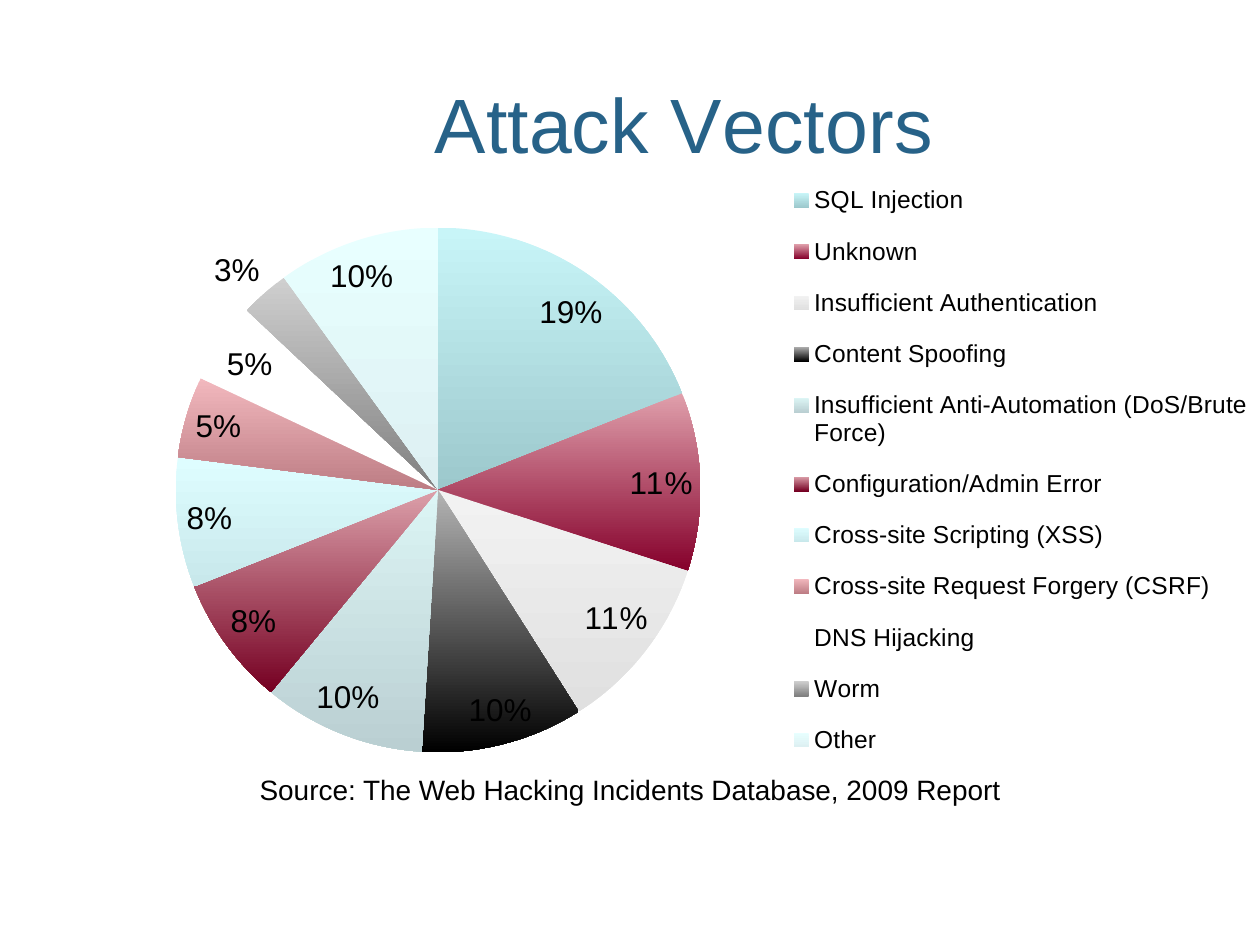
import dataclasses

import lxml.etree
import pptx
import pptx.chart.data
import pptx.dml.color
import pptx.enum.chart
import pptx.enum.text
import pptx.oxml.ns
import pptx.util

Cm = pptx.util.Cm
Pt = pptx.util.Pt
RGBColor = pptx.dml.color.RGBColor

FONT = "Arial"
TITLE_BLUE = RGBColor(0x27, 0x62, 0x88)
BLACK = RGBColor(0x00, 0x00, 0x00)
WHITE = RGBColor(0xFF, 0xFF, 0xFF)


@dataclasses.dataclass(frozen=True)
class Slice:
    """One attack vector with its share and vertical gradient."""
    name: str
    share: float
    top: RGBColor
    bottom: RGBColor


SLICES = [
    Slice("SQL Injection", 0.19, RGBColor(0xC8, 0xF5, 0xF8), RGBColor(0x9C, 0xC8, 0xCC)),
    Slice("Unknown", 0.11, RGBColor(0xE0, 0xA0, 0xAC), RGBColor(0x85, 0x00, 0x2B)),
    Slice("Insufficient Authentication", 0.11, RGBColor(0xF2, 0xF2, 0xF2), RGBColor(0xE0, 0xE0, 0xE0)),
    Slice("Content Spoofing", 0.1, RGBColor(0xB4, 0xB4, 0xB4), BLACK),
    Slice("Insufficient Anti-Automation (DoS/Brute Force)", 0.1,
          RGBColor(0xDC, 0xF5, 0xF5), RGBColor(0xBA, 0xCF, 0xD2)),
    Slice("Configuration/Admin Error", 0.08, RGBColor(0xDC, 0xA0, 0xAA), RGBColor(0x75, 0x00, 0x22)),
    Slice("Cross-site Scripting (XSS)", 0.08, RGBColor(0xDE, 0xFD, 0xFF), RGBColor(0xC8, 0xE8, 0xEB)),
    Slice("Cross-site Request Forgery (CSRF)", 0.05, RGBColor(0xF2, 0xB8, 0xBE), RGBColor(0xBD, 0x7D, 0x84)),
    Slice("DNS Hijacking", 0.05, WHITE, WHITE),
    Slice("Worm", 0.03, RGBColor(0xCF, 0xCF, 0xCF), RGBColor(0x80, 0x80, 0x80)),
    Slice("Other", 0.1, RGBColor(0xE8, 0xFF, 0xFF), RGBColor(0xDD, 0xF0, 0xF2)),
]


def style_font(font, size: float, color: RGBColor) -> None:
    font.name = FONT
    font.size = Pt(size)
    font.bold = False
    font.color.rgb = color


def set_layout(element, index: int, inner: bool = False, **fractions: float) -> None:
    """Place a chart part by fractions of the chart area."""
    qn = pptx.oxml.ns.qn
    for old_layout in element.findall(qn("c:layout")):
        element.remove(old_layout)
    layout = lxml.etree.Element(qn("c:layout"))
    manual = lxml.etree.SubElement(layout, qn("c:manualLayout"))
    settings = {"layoutTarget": "inner"} if inner else {}
    settings |= {"xMode": "edge", "yMode": "edge", **fractions}
    for tag, value in settings.items():
        lxml.etree.SubElement(manual, qn(f"c:{tag}")).set("val", str(value))
    element.insert(index, layout)


def paint_slice(point, item: Slice) -> None:
    fill = point.format.fill
    if item.top == item.bottom:
        fill.solid()
        fill.fore_color.rgb = item.top
    else:
        fill.gradient()
        fill.gradient_angle = 270
        for stop, color in zip(fill.gradient_stops, (item.top, item.bottom)):
            stop.color.rgb = color
    point.format.line.fill.background()


def add_pie(slide) -> None:
    data = pptx.chart.data.CategoryChartData(number_format="0%")
    data.categories = [item.name for item in SLICES]
    data.add_series("Attack Vectors", [item.share for item in SLICES])
    chart = slide.shapes.add_chart(
        pptx.enum.chart.XL_CHART_TYPE.PIE,
        Cm(1.9), Cm(0.43), Cm(23.5), Cm(15.88), data).chart
    style_font(chart.font, 18, BLACK)

    # Title
    chart.has_title = True
    title = chart.chart_title
    title.text_frame.text = "Attack Vectors"
    style_font(title.text_frame.paragraphs[0].font, 44, TITLE_BLUE)
    set_layout(title._element, 1, x=0.28, y=0.05)

    # Legend
    chart.has_legend = True
    legend = chart.legend
    legend.position = pptx.enum.chart.XL_LEGEND_POSITION.RIGHT
    legend.include_in_layout = False
    style_font(legend.font, 14, BLACK)
    set_layout(legend._element, 1, x=0.59, y=0.18, w=0.41, h=0.78)

    # Slices and their labels
    plot = chart.plots[0]
    plot.vary_by_categories = True
    plot.has_data_labels = True
    labels = plot.data_labels
    labels.show_value = True
    labels.show_percentage = False
    labels.number_format = "0%"
    labels.number_format_is_linked = False
    labels.position = pptx.enum.chart.XL_LABEL_POSITION.BEST_FIT
    style_font(labels.font, 18, BLACK)
    for index, item in enumerate(SLICES):
        paint_slice(plot.series[0].points[index], item)
    plot_area = chart._chartSpace.xpath("c:chart/c:plotArea")[0]
    set_layout(plot_area, 0, inner=True, x=0.07, y=0.26, w=0.45, h=0.67)


def add_source(slide) -> None:
    box = slide.shapes.add_textbox(Cm(0.32), Cm(15.44), Cm(24.77), Cm(1.14))
    box.text_frame.word_wrap = False
    paragraph = box.text_frame.paragraphs[0]
    paragraph.text = "Source: The Web Hacking Incidents Database, 2009 Report"
    paragraph.alignment = pptx.enum.text.PP_ALIGN.CENTER
    style_font(paragraph.font, 16, BLACK)


def main() -> None:
    presentation = pptx.Presentation()
    presentation.slide_width = Cm(25.4)
    presentation.slide_height = Cm(19.05)
    slide = presentation.slides.add_slide(presentation.slide_layouts[6])
    add_pie(slide)
    add_source(slide)
    presentation.save("out.pptx")


if __name__ == "__main__":
    main()
